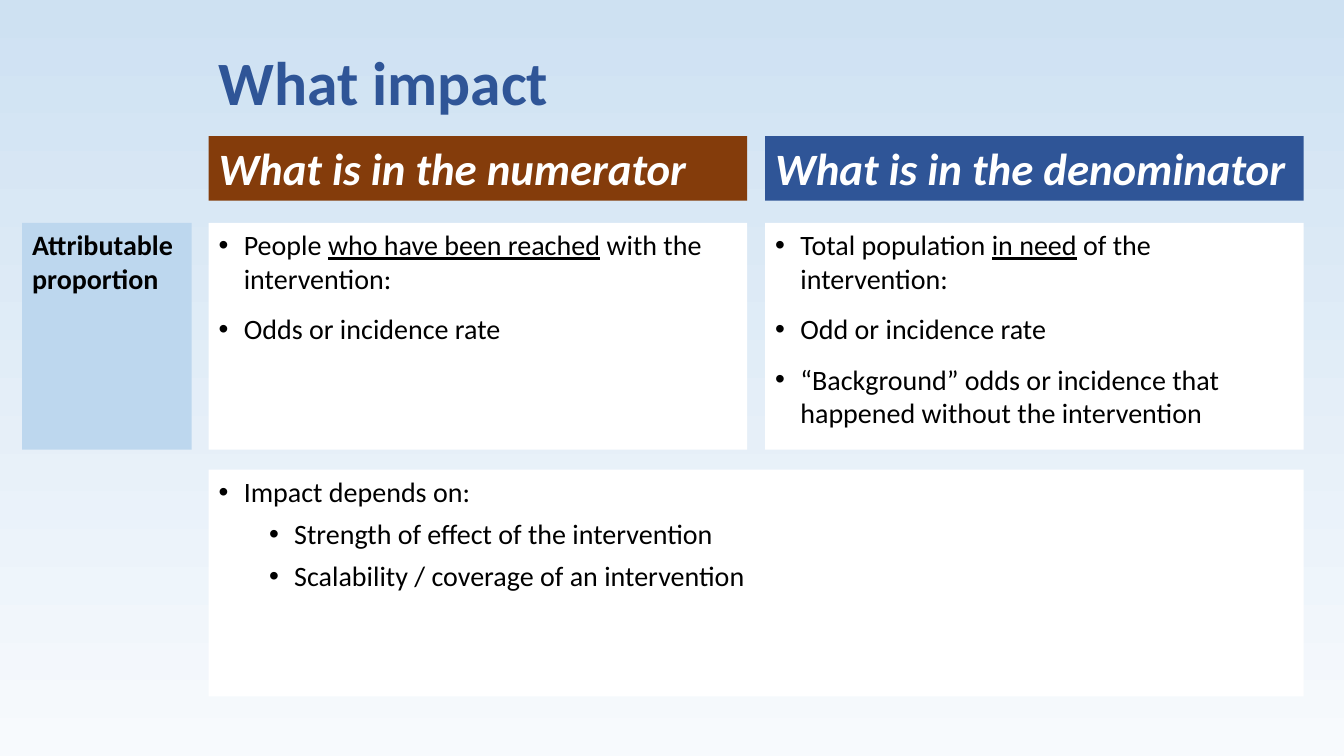
"""Build the slide on numerator and denominator of impact."""
import pptx
import pptx.dml.color
import pptx.enum.shapes
import pptx.enum.text
import pptx.oxml
import pptx.oxml.ns
import pptx.util

Inches = pptx.util.Inches
Pt = pptx.util.Pt
Anchor = pptx.enum.text.MSO_ANCHOR
BLUE, WHITE, BLACK = "2F5597", "FFFFFF", "000000"


def color(code):
    return pptx.dml.color.RGBColor.from_string(code)


def add_block(area, fill, paragraphs, size=20, ink=BLACK, bold=False, italic=False,
              anchor=Anchor.TOP, line=1.0, before=0, after=0):
    """Add a filled box; each paragraph is (bullet indent or None, text runs), odd runs underlined."""
    left, top, width, height = (Inches(length) for length in area)
    if fill:
        box = page.shapes.add_shape(pptx.enum.shapes.MSO_SHAPE.RECTANGLE, left, top, width, height)
        box.shadow.inherit = False
        box.fill.solid()
        box.fill.fore_color.rgb = color(fill)
        box.line.fill.background()
    else:
        box = page.shapes.add_textbox(left, top, width, height)
    frame = box.text_frame
    frame.word_wrap = True
    frame.vertical_anchor = anchor
    for index, (indent, runs) in enumerate(paragraphs):
        para = frame.paragraphs[0] if index == 0 else frame.add_paragraph()
        para.alignment = pptx.enum.text.PP_ALIGN.LEFT
        para.line_spacing = line
        para.space_before = Pt(before)
        para.space_after = Pt(after)
        if indent is not None:
            para.level = int(indent > 0.5)
            properties = para._p.get_or_add_pPr()
            properties.set("marL", str(Inches(indent)))
            properties.set("indent", str(Inches(-0.25)))
            namespace = pptx.oxml.ns.nsdecls("a")
            for bullet in ('buFont {} typeface="Arial"', 'buChar {} char="•"'):
                properties.append(pptx.oxml.parse_xml(f"<a:{bullet.format(namespace)}/>"))
        for position, text in enumerate(runs):
            span = para.add_run()
            span.text = text
            span.font.name = "Calibri"
            span.font.size = Pt(size)
            span.font.color.rgb = color(ink)
            span.font.bold = bold
            span.font.italic = italic
            span.font.underline = position % 2 == 1


deck = pptx.Presentation()
deck.slide_width, deck.slide_height = Inches(13.33), Inches(7.5)
page = deck.slides.add_slide(deck.slide_layouts[6])

backdrop = page.background.fill
backdrop.gradient()
backdrop.gradient_angle = 90
for stop, code in zip(backdrop.gradient_stops, ("F7FAFD", "CEE1F2")):
    stop.color.rgb = color(code)

label_left, label_width = 0.22, 1.68
first_left, column_width, column_step = 2.07, 5.34, 5.52
header_top, header_height = 1.35, 0.64
body_top, body_height, body_step = 2.21, 2.25, 2.45

add_block((first_left, 0.4, 10.34, 0.9), None, [(None, ["What impact"])],
          size=44, ink=BLUE, bold=True, anchor=Anchor.MIDDLE, line=0.9)

columns = [
    ("What is in the numerator", "843C0B", [
        ["People ", "who have been reached", " with the intervention:"],
        ["Odds or incidence rate"],
    ]),
    ("What is in the denominator", BLUE, [
        ["Total population ", "in need", " of the intervention:"],
        ["Odd or incidence rate"],
        ["“Background” odds or incidence that happened without the intervention"],
    ]),
]
for number, (heading, fill, points) in enumerate(columns):
    left = first_left + number * column_step
    add_block((left, header_top, column_width, header_height), fill, [(None, [heading])],
              size=32, ink=WHITE, bold=True, italic=True, anchor=Anchor.BOTTOM, line=0.9, before=10)
    add_block((left, body_top, column_width, body_height), WHITE,
              [(0.25, runs) for runs in points], after=12)

add_block((label_left, body_top, label_width, body_height), "BDD7EE",
          [(None, ["Attributable proportion"])], bold=True, after=12)
add_block((first_left, body_top + body_step, column_step + column_width, body_height), WHITE, [
    (0.25, ["Impact depends on:"]),
    (0.75, ["Strength of effect of the intervention"]),
    (0.75, ["Scalability / coverage of an intervention"]),
], after=6)

deck.save("out.pptx")
